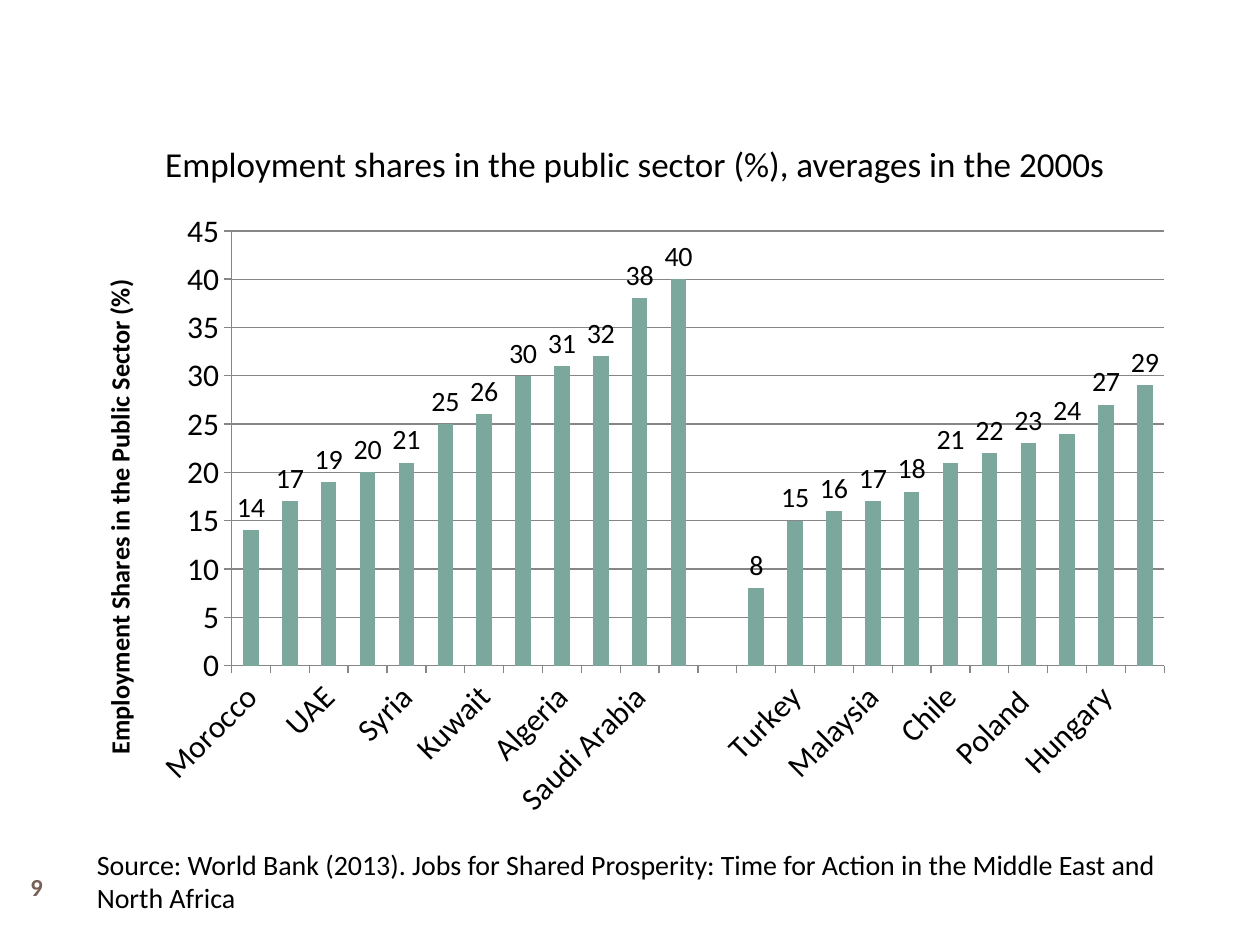
import pptx
import pptx.chart.data
import pptx.dml.color
import pptx.enum.chart
import pptx.enum.text
import pptx.oxml
import pptx.oxml.ns
import pptx.util

WIDTH, HEIGHT = pptx.util.Inches(10), pptx.util.Inches(7.5)
CENTER = pptx.enum.text.PP_ALIGN.CENTER
LEFT = pptx.enum.text.PP_ALIGN.LEFT
TOP = pptx.enum.text.MSO_ANCHOR.TOP
MIDDLE = pptx.enum.text.MSO_ANCHOR.MIDDLE


def style(font, size, color="000000", bold=False):
    values = {"name": "Calibri", "size": pptx.util.Pt(size), "bold": bold}
    for key, value in values.items():
        setattr(font, key, value)
    font.color.rgb = pptx.dml.color.RGBColor.from_string(color)


def manual_layout(parent, before, **shares):
    """Place a chart part by shares of the chart's size."""
    for old in parent.findall(pptx.oxml.ns.qn("c:layout")):
        parent.remove(old)
    inner = '<c:layoutTarget val="inner"/>' if "w" in shares else ""
    modes = '<c:xMode val="edge"/><c:yMode val="edge"/>'
    places = "".join(f'<c:{key} val="{share}"/>' for key, share in shares.items())
    layout = pptx.oxml.parse_xml(
        f'<c:layout {pptx.oxml.ns.nsdecls("c")}><c:manualLayout>'
        f"{inner}{modes}{places}</c:manualLayout></c:layout>")
    parent.find(pptx.oxml.ns.qn(before)).addprevious(layout)


deck = pptx.Presentation()
deck.slide_width, deck.slide_height = WIDTH, HEIGHT
slide = deck.slides.add_slide(deck.slide_layouts[5])

# Heading, source and page number, placed by shares of the slide
heading = slide.shapes.title
heading.left, heading.top = int(WIDTH * 0.075), int(HEIGHT * 0.144)
heading.width, heading.height = int(WIDTH * 0.858), int(HEIGHT * 0.058)
source = slide.shapes.add_textbox(
    int(WIDTH * 0.067), int(HEIGHT * 0.89), int(WIDTH * 0.9), int(HEIGHT * 0.077))
page = slide.shapes.add_textbox(
    0, int(HEIGHT * 0.91), int(WIDTH * 0.058), int(HEIGHT * 0.056))

for part, words, size, color, bold, align, anchor in [
    (heading, "Employment shares in the public sector (%), averages in the 2000s",
     20, "000000", False, CENTER, TOP),
    (source, "Source: World Bank (2013). Jobs for Shared Prosperity: "
     "Time for Action in the Middle East and North Africa",
     16, "000000", False, LEFT, TOP),
    (page, "9", 14, "775F55", True, CENTER, MIDDLE),
]:
    frame = part.text_frame
    frame.text = words
    frame.word_wrap = True
    frame.auto_size = pptx.enum.text.MSO_AUTO_SIZE.NONE
    frame.vertical_anchor = anchor
    frame.paragraphs[0].alignment = align
    style(frame.paragraphs[0].runs[0].font, size, color, bold)

# Shares by country: the region, a gap, then the comparison countries
shares = [
    ("Morocco", 14), ("Iran", 17), ("UAE", 19), ("Qatar", 20), ("Syria", 21),
    ("Egypt", 25), ("Kuwait", 26), ("Iraq", 30), ("Algeria", 31),
    ("Palestine", 32), ("Saudi Arabia", 38), ("Jordan", 40), ("", None),
    ("Indonesia", 8), ("Turkey", 15), ("Mexico", 16), ("Malaysia", 17),
    ("Brazil", 18), ("Chile", 21), ("Spain", 22), ("Poland ", 23),
    ("Bulgaria", 24), ("Hungary", 27), ("China", 29),
]
data = pptx.chart.data.CategoryChartData()
data.categories = [country for country, share in shares]
data.add_series("Series 1", [share for country, share in shares])
chart = slide.shapes.add_chart(
    pptx.enum.chart.XL_CHART_TYPE.COLUMN_CLUSTERED,
    int(WIDTH * 0.05), int(HEIGHT * 0.211), int(WIDTH * 0.892),
    int(HEIGHT * 0.667), data).chart
chart.has_legend = False
chart.has_title = False
style(chart.font, 18)
manual_layout(chart._chartSpace.chart.plotArea, "c:barChart",
              x=0.15, y=0.05, w=0.83, h=0.69)

# Columns and their labels
plot = chart.plots[0]
plot.gap_width = 150
plot.vary_by_categories = False
columns = plot.series[0].format.fill
columns.solid()
columns.fore_color.rgb = pptx.dml.color.RGBColor.from_string("7BA79D")
plot.has_data_labels = True
labels = plot.data_labels
labels.show_value = True
labels.position = pptx.enum.chart.XL_LABEL_POSITION.OUTSIDE_END
style(labels.font, 16)

# Axes
countries, percent = chart.category_axis, chart.value_axis
for axis in (countries, percent):
    axis.major_tick_mark = pptx.enum.chart.XL_TICK_MARK.OUTSIDE
    style(axis.tick_labels.font, 18)
percent.minimum_scale, percent.maximum_scale, percent.major_unit = 0, 45, 5
percent.has_major_gridlines = True
for line in (countries.format.line, percent.format.line,
             percent.major_gridlines.format.line):
    line.color.rgb = pptx.dml.color.RGBColor.from_string("868686")
    line.width = pptx.util.Pt(0.75)
slant = countries._element.find(pptx.oxml.ns.qn("c:txPr"))
slant.find(pptx.oxml.ns.qn("a:bodyPr")).set("rot", "-2700000")

percent.has_title = True
caption = percent.axis_title
caption.text_frame.text = "Employment Shares in the Public Sector (%)"
style(caption.text_frame.paragraphs[0].runs[0].font, 15, bold=True)
turn = caption.text_frame._txBody.find(pptx.oxml.ns.qn("a:bodyPr"))
turn.set("rot", "-5400000")
turn.set("vert", "horz")
manual_layout(caption._element, "c:overlay", x=0.03, y=0.12)

deck.save("out.pptx")
